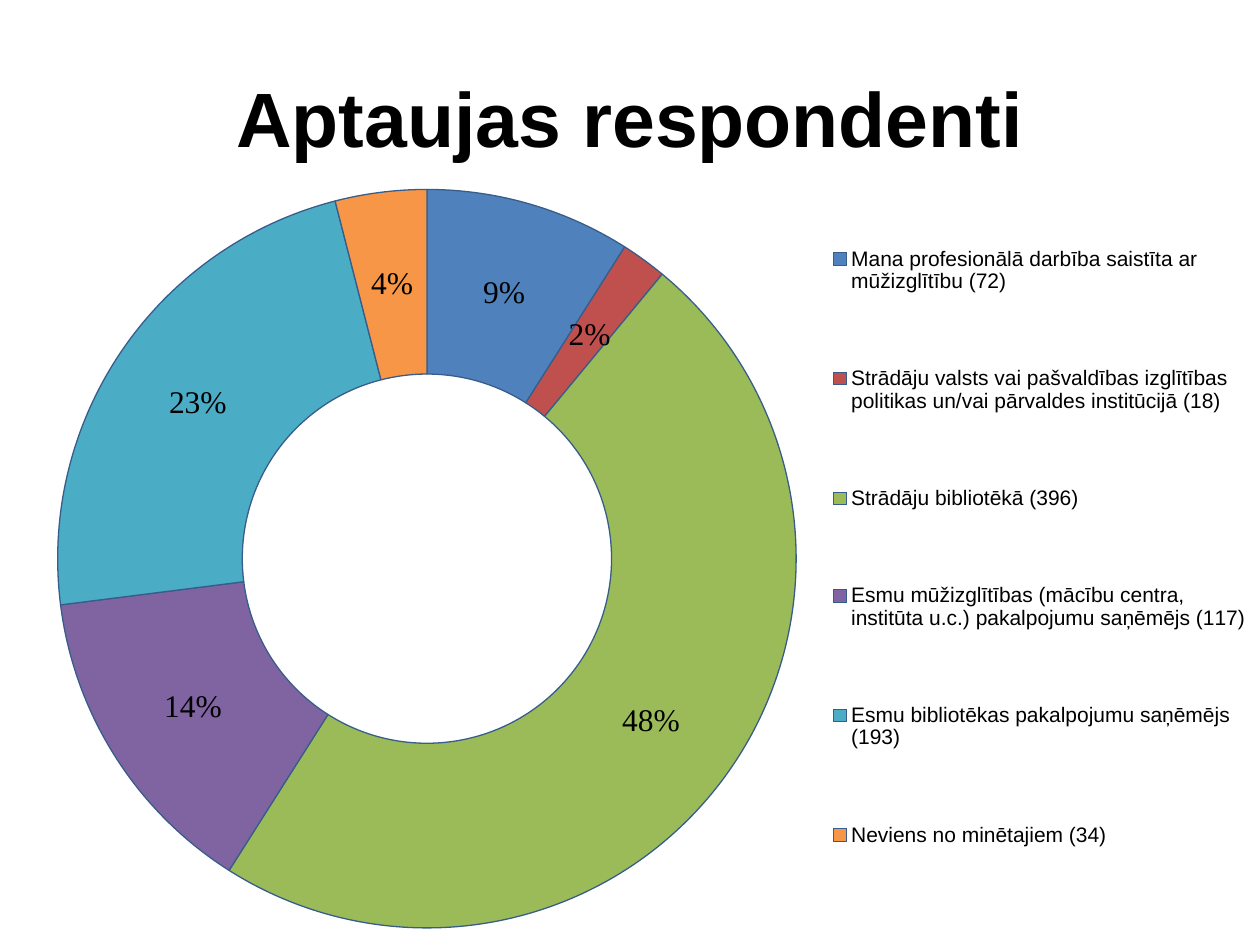
from dataclasses import dataclass

import lxml.etree
import pptx
import pptx.chart.data
import pptx.dml.color
import pptx.enum.chart
import pptx.enum.text
import pptx.oxml.ns
import pptx.util

RGBColor = pptx.dml.color.RGBColor
BLACK = RGBColor(0x00, 0x00, 0x00)
OUTLINE = RGBColor(0x38, 0x5D, 0x8A)
BLUE = RGBColor(0x4F, 0x81, 0xBD)
RED = RGBColor(0xC0, 0x50, 0x4D)
GREEN = RGBColor(0x9B, 0xBB, 0x59)
PURPLE = RGBColor(0x80, 0x64, 0xA2)
TEAL = RGBColor(0x4B, 0xAC, 0xC6)
ORANGE = RGBColor(0xF7, 0x96, 0x46)

WIDTH = pptx.util.Inches(10)
HEIGHT = pptx.util.Inches(7.5)
CHART_COLUMNS = 300


@dataclass(frozen=True)
class Area:
    """A rectangle given as shares of whatever holds it."""
    left: float
    top: float
    width: float
    height: float

    def on_page(self) -> tuple[int, int, int, int]:
        return (int(self.left * WIDTH), int(self.top * HEIGHT),
                int(self.width * WIDTH), int(self.height * HEIGHT))


@dataclass(frozen=True)
class Group:
    label: str
    percent: int
    color: RGBColor


TITLE_AREA = Area(0.05, 0.04, 0.9, 1 / 6)
CHART_AREA = Area(0.23 / 10, 1.37 / 7.5, 9.77 / 10, 6.13 / 7.5)
RING_AREA = Area(7 / CHART_COLUMNS, 0.02, 180 / CHART_COLUMNS, 0.96)
LEGEND_AREA = Area(199 / CHART_COLUMNS, 0, 101 / CHART_COLUMNS, 0.97)

GROUPS = [
    Group("Mana profesionālā darbība saistīta ar mūžizglītību (72)", 9, BLUE),
    Group("Strādāju valsts vai pašvaldības izglītības politikas un/vai "
          "pārvaldes institūcijā (18)", 2, RED),
    Group("Strādāju bibliotēkā (396)", 48, GREEN),
    Group("Esmu mūžizglītības (mācību centra, institūta u.c.) "
          "pakalpojumu saņēmējs (117)", 14, PURPLE),
    Group("Esmu bibliotēkas pakalpojumu saņēmējs (193)", 23, TEAL),
    Group("Neviens no minētajiem (34)", 4, ORANGE),
]


def set_font(font, name: str, size: int, bold: bool = False) -> None:
    font.name = name
    font.size = pptx.util.Pt(size)
    font.bold = bold
    font.color.rgb = BLACK


def add_title(page, text: str) -> None:
    title = page.shapes.title
    title.left, title.top, title.width, title.height = TITLE_AREA.on_page()
    frame = title.text_frame
    frame.text = text
    frame.vertical_anchor = pptx.enum.text.MSO_ANCHOR.MIDDLE
    para = frame.paragraphs[0]
    para.alignment = pptx.enum.text.PP_ALIGN.CENTER
    set_font(para.runs[0].font, "Arial", 44, bold=True)


def place_in_chart(element, area: Area, inner: bool = False) -> None:
    """Give the plot area or legend a manual layout inside the chart."""
    qn = pptx.oxml.ns.qn
    layout = element.find(qn("c:layout"))
    if layout is None:
        layout = lxml.etree.Element(qn("c:layout"))
        element.insert(1 if element.tag == qn("c:legend") else 0, layout)
    manual = lxml.etree.SubElement(layout, qn("c:manualLayout"))
    settings = {"layoutTarget": "inner"} if inner else {}
    settings |= {"xMode": "edge", "yMode": "edge", "x": area.left,
                 "y": area.top, "w": area.width, "h": area.height}
    for name, value in settings.items():
        lxml.etree.SubElement(manual, qn(f"c:{name}")).set("val", str(value))


def add_respondent_chart(page, groups: list[Group]) -> None:
    data = pptx.chart.data.CategoryChartData()
    data.categories = [group.label for group in groups]
    data.add_series("Series 1", [group.percent for group in groups])
    chart = page.shapes.add_chart(
        pptx.enum.chart.XL_CHART_TYPE.DOUGHNUT, *CHART_AREA.on_page(), data).chart
    chart.has_title = False
    set_font(chart.font, "Times New Roman", 18)

    plot = chart.plots[0]
    plot.vary_by_categories = True
    for index, group in enumerate(groups):
        slice_format = plot.series[0].points[index].format
        slice_format.fill.solid()
        slice_format.fill.fore_color.rgb = group.color
        slice_format.line.color.rgb = OUTLINE
        slice_format.line.width = pptx.util.Pt(0.75)
    labels = plot.series[0].data_labels
    labels.show_value = False
    labels.show_percentage = True
    labels.number_format = "0%"
    labels.number_format_is_linked = False
    set_font(labels.font, "Times New Roman", 18)

    chart.has_legend = True
    legend = chart.legend
    legend.position = pptx.enum.chart.XL_LEGEND_POSITION.RIGHT
    legend.include_in_layout = False
    set_font(legend.font, "Arial", 12)

    plot_area = chart.element.find(".//" + pptx.oxml.ns.qn("c:plotArea"))
    legend_element = chart.element.find(".//" + pptx.oxml.ns.qn("c:legend"))
    plot_area.find(".//" + pptx.oxml.ns.qn("c:holeSize")).set("val", "50")
    place_in_chart(plot_area, RING_AREA, inner=True)
    place_in_chart(legend_element, LEGEND_AREA)


def main() -> None:
    deck = pptx.Presentation()
    deck.slide_width, deck.slide_height = WIDTH, HEIGHT
    page = deck.slides.add_slide(deck.slide_layouts.get_by_name("Title Only"))
    add_title(page, "Aptaujas respondenti")
    add_respondent_chart(page, GROUPS)
    deck.save("out.pptx")


if __name__ == "__main__":
    main()
